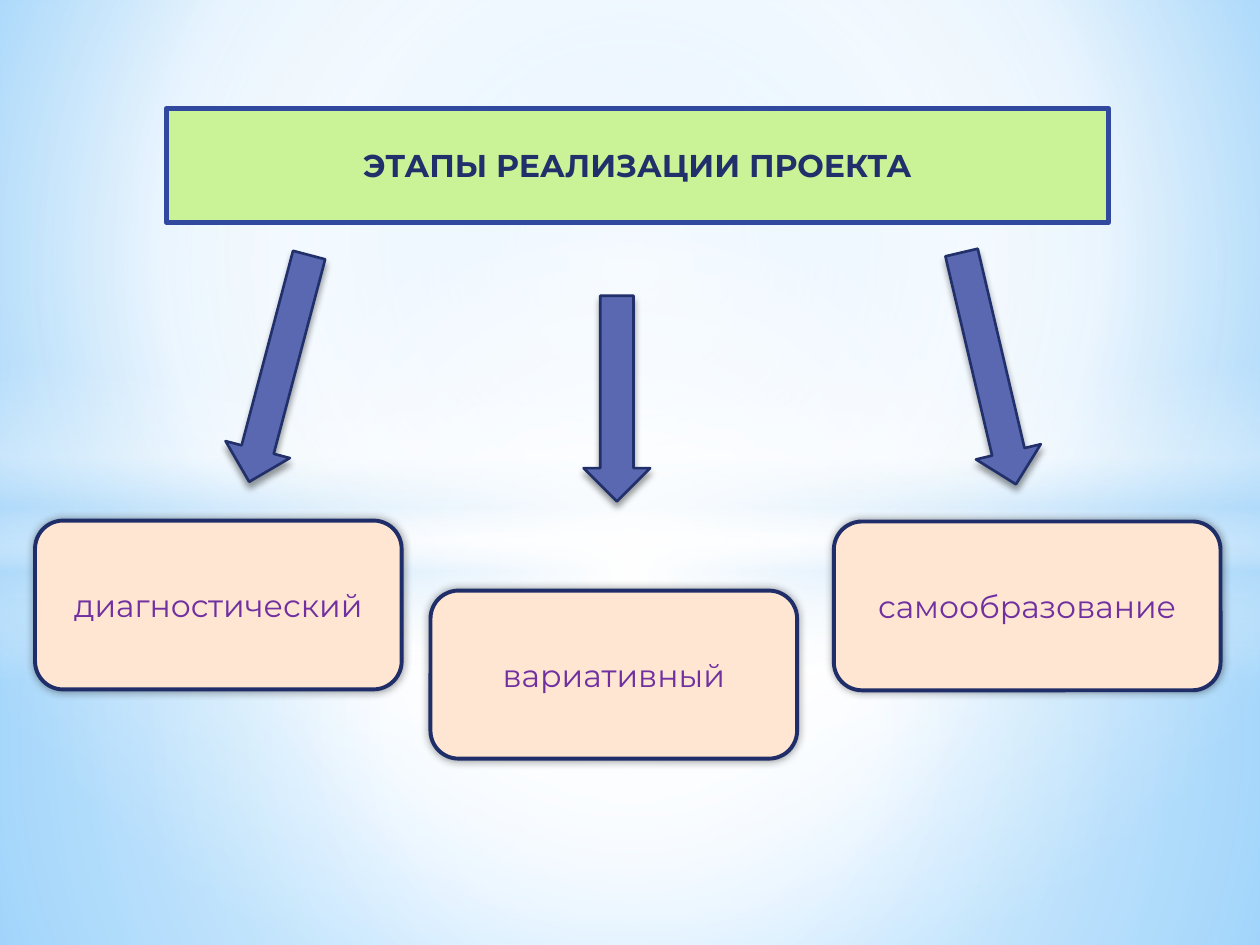
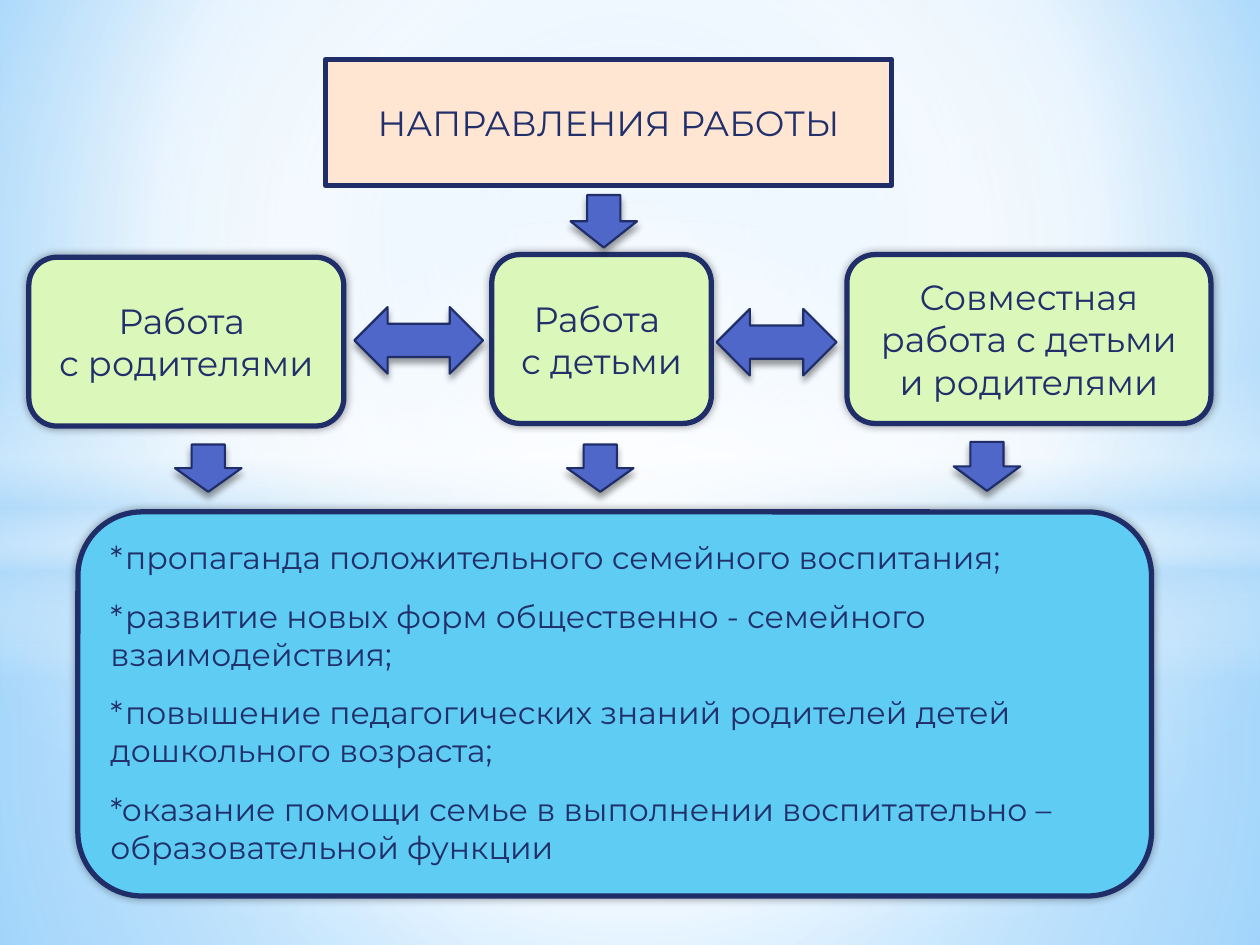
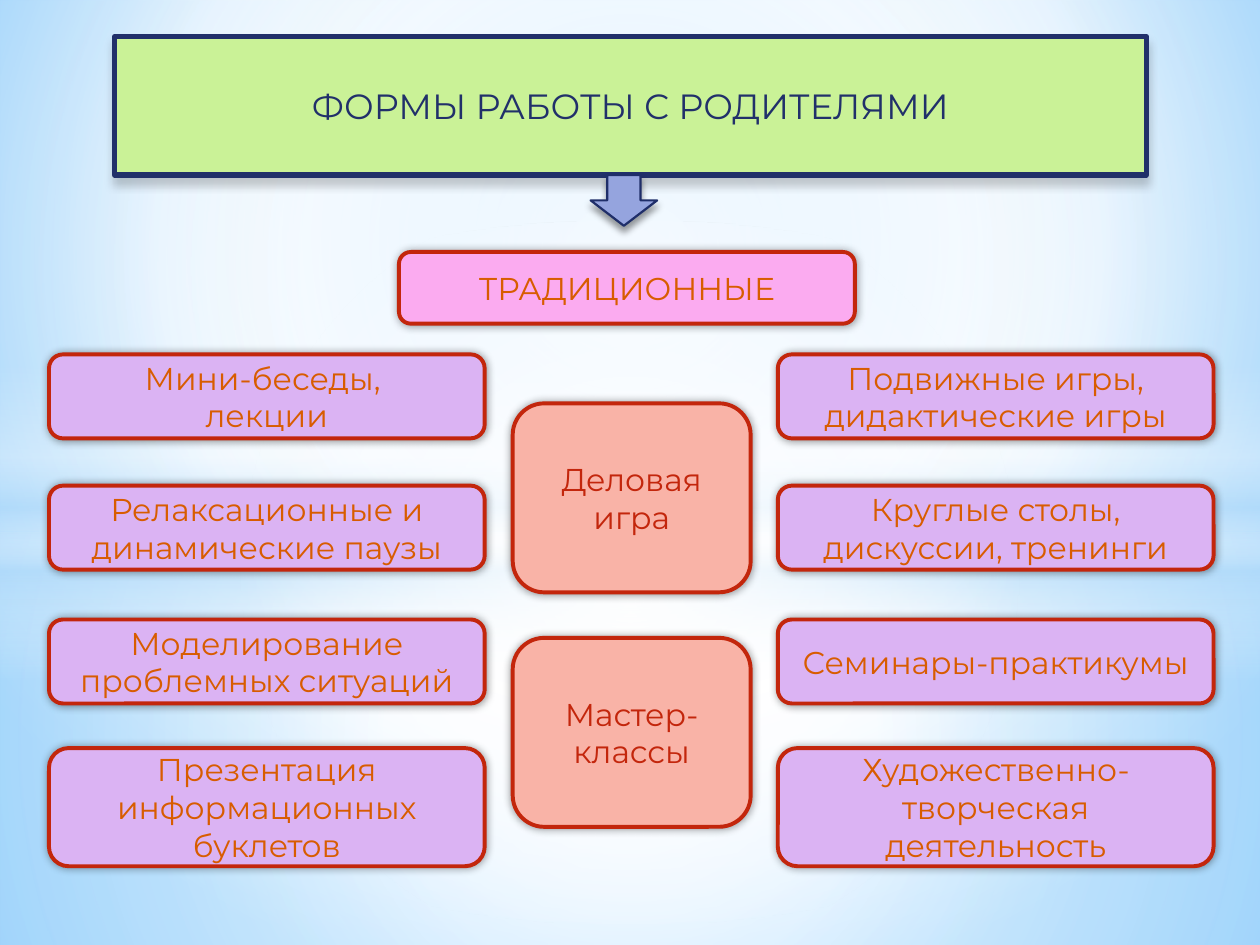
from lxml import etree
from pptx import Presentation
from pptx.dml.color import RGBColor
from pptx.enum.shapes import MSO_SHAPE
from pptx.enum.text import MSO_ANCHOR, MSO_AUTO_SIZE, PP_ALIGN
from pptx.oxml import parse_xml
from pptx.oxml.ns import nsdecls, qn
from pptx.util import Pt

RECTANGLE = MSO_SHAPE.RECTANGLE
ELLIPSE = MSO_SHAPE.OVAL
ROUNDED = MSO_SHAPE.ROUNDED_RECTANGLE
PLATE = MSO_SHAPE.FLOWCHART_ALTERNATE_PROCESS
DOWN_ARROW = MSO_SHAPE.DOWN_ARROW
DOUBLE_ARROW = MSO_SHAPE.LEFT_RIGHT_ARROW

FONT = "Montserrat"
WHITE = RGBColor(0xFF, 0xFF, 0xFF)
BLACK = RGBColor(0x00, 0x00, 0x00)
SKY = RGBColor(0x9E, 0xD5, 0xFF)
DEEP_SKY = RGBColor(0x5B, 0xB9, 0xFF)
HAZE = RGBColor(0xB4, 0xDC, 0xFA)
NAVY = RGBColor(0x1F, 0x2E, 0x69)
INK = RGBColor(0x21, 0x30, 0x6A)
ROYAL = RGBColor(0x31, 0x48, 0x9F)
INDIGO = RGBColor(0x59, 0x68, 0xB0)
BLUE = RGBColor(0x4E, 0x67, 0xC8)
PALE_BLUE = RGBColor(0x95, 0xA4, 0xDE)
CYAN = RGBColor(0x5E, 0xCC, 0xF3)
PEACH = RGBColor(0xFF, 0xE6, 0xD3)
LIME = RGBColor(0xCA, 0xF2, 0x97)
PALE_LIME = RGBColor(0xDC, 0xF7, 0xBA)
PURPLE = RGBColor(0x70, 0x30, 0xA0)
PINK = RGBColor(0xFB, 0xAB, 0xF0)
LILAC = RGBColor(0xDB, 0xB3, 0xF3)
SALMON = RGBColor(0xF9, 0xB3, 0xA7)
RED = RGBColor(0xC3, 0x26, 0x0C)
ORANGE = RGBColor(0xD8, 0x5C, 0x00)

# Shadows: opacity in percent, blur and distance in points, direction in degrees
GLOW = (40, 5, 0, 0)
DROP = (40, 4, 3, 90)
SOFT_DROP = (20, 5, 4, 90)

CENTRE = (50, 50, 50, 50)


def place(shape, box):
    shape.left, shape.top, shape.width, shape.height = map(Pt, box)


def apply_gradient(element, stops, focus=None):
    """Replace the first gradient in element; stops are (position, colour, opacity).

    With a focus (left, top, right, bottom) it is radial, otherwise it runs downwards.
    """
    gradient = element.find(".//" + qn("a:gradFill"))
    for child in list(gradient):
        gradient.remove(child)
    stop_list = etree.SubElement(gradient, qn("a:gsLst"))
    for position, colour, opacity in stops:
        stop = etree.SubElement(stop_list, qn("a:gs"), pos=str(position * 1000))
        tone = etree.SubElement(stop, qn("a:srgbClr"), val=str(colour))
        etree.SubElement(tone, qn("a:alpha"), val=str(opacity * 1000))
    if focus:
        radial = etree.SubElement(gradient, qn("a:path"), path="circle")
        sides = {side: str(value * 1000) for side, value in zip("ltrb", focus)}
        etree.SubElement(radial, qn("a:fillToRect"), **sides)
    else:
        etree.SubElement(gradient, qn("a:lin"), ang="5400000", scaled="0")


def add_shadow(shape, shadow):
    opacity, blur, distance, direction = shadow
    shape.element.spPr.find(qn("a:effectLst")).append(parse_xml(
        f'<a:outerShdw {nsdecls("a")} blurRad="{Pt(blur)}" dist="{Pt(distance)}" '
        f'dir="{direction * 60000}" algn="ctr" rotWithShape="0">'
        f'<a:srgbClr val="{BLACK}"><a:alpha val="{opacity * 1000}"/></a:srgbClr>'
        '</a:outerShdw>'))


def style_shape(shape, fill, line, width, shadow=None):
    shape.fill.solid()
    shape.fill.fore_color.rgb = fill
    shape.line.color.rgb = line
    shape.line.width = Pt(width)
    shape.shadow.inherit = False
    if shadow:
        add_shadow(shape, shadow)


def write(shape, text, colour, size=18, bold=False, align=PP_ALIGN.CENTER,
          anchor=MSO_ANCHOR.MIDDLE):
    frame = shape.text_frame
    frame.text = text
    frame.word_wrap = True
    frame.vertical_anchor = anchor
    for paragraph in frame.paragraphs:
        paragraph.alignment = align
        for run in paragraph.runs:
            run.font.name = FONT
            run.font.size = Pt(size)
            run.font.bold = bold
            run.font.color.rgb = colour


def add_box(slide, kind, box, fill, line, width, text="", colour=INK, size=18):
    shape = slide.shapes.add_shape(kind, *map(Pt, box))
    style_shape(shape, fill, line, width, GLOW)
    if text:
        write(shape, text, colour, size)
    return shape


def add_arrow(slide, kind, box, fill, line=NAVY, width=1.25, rotation=0):
    arrow = slide.shapes.add_shape(kind, *map(Pt, box))
    style_shape(arrow, fill, line, width, DROP)
    arrow.rotation = rotation


def set_title(slide, geometry, box, text, fill, line, size=20, bold=False,
              shadow=None, adjustments=()):
    """Give the title placeholder a preset outline and fill it in."""
    title = slide.shapes.title
    place(title, box)
    guides = "".join(f'<a:gd name="adj{number}" fmla="val {value}"/>'
                     for number, value in enumerate(adjustments, 1))
    title.element.spPr.find(qn("a:xfrm")).addnext(parse_xml(
        f'<a:prstGeom {nsdecls("a")} prst="{geometry}">'
        f'<a:avLst>{guides}</a:avLst></a:prstGeom>'))
    style_shape(title, fill, line, 3, shadow)
    write(title, text, INK, size, bold)
    title.text_frame.auto_size = MSO_AUTO_SIZE.NONE


def build_backdrop(master, slide):
    """Draw the sky layers on the slide and move them to the master."""
    master.background.fill.gradient()
    apply_gradient(master.element,
                   [(0, SKY, 100), (60, WHITE, 100), (100, DEEP_SKY, 100)],
                   (20, 10, 20, 60))
    layers = [
        (RECTANGLE, (0, 304.5, 720, 235.5),
         [(0, WHITE, 91), (37, WHITE, 76), (100, HAZE, 79)], CENTRE),
        (RECTANGLE, (0, 0, 720, 304.5),
         [(0, WHITE, 89), (48, WHITE, 62), (100, HAZE, 79)], CENTRE),
        (RECTANGLE, (0, 209, 720, 180),
         [(0, WHITE, 0), (29, WHITE, 30), (45, HAZE, 40), (55, WHITE, 26),
          (65, HAZE, 60), (100, WHITE, 0)], None),
        (ELLIPSE, (0, 126, 720, 402), [(0, WHITE, 100), (54, WHITE, 0)], CENTRE),
    ]
    for index, (kind, box, stops, focus) in enumerate(layers):
        layer = slide.shapes.add_shape(kind, *map(Pt, box))
        layer.fill.gradient()
        apply_gradient(layer.element, stops, focus)
        layer.line.fill.background()
        layer.shadow.inherit = False
        layer.element.nvSpPr.cNvPr.set("id", str(101 + index))
        master.shapes.element.insert(2 + index, layer.element)


def build_stages(slide):
    set_title(slide, "ellipse", (95, 62, 538.5, 65), "ЭТАПЫ РЕАЛИЗАЦИИ ПРОЕКТА",
              LIME, ROYAL, size=18, bold=True)
    stages = [
        ("диагностический", (20, 297.5, 209.5, 96.5), (140.5, 143.5, 38, 134), 14.8),
        ("вариативный", (246, 337.5, 209.5, 96), (333.5, 169, 38, 117.5), 0),
        ("самообразование", (476.5, 298, 221, 96.5), (546, 142.5, 38, 136), 346.8),
    ]
    for text, box, arrow_box, rotation in stages:
        add_box(slide, ROUNDED, box, PEACH, NAVY, 2.25, text, PURPLE)
        add_arrow(slide, DOWN_ARROW, arrow_box, INDIGO, INK, 1.5, rotation)


def build_directions(slide):
    set_title(slide, "roundRect", (186, 34, 323.5, 72), "НАПРАВЛЕНИЯ РАБОТЫ",
              PEACH, NAVY)
    directions = [
        ("Работа \nс родителями", (16.5, 147, 180, 96.5)),
        ("Работа \nс детьми", (281, 145.5, 125.5, 96.5)),
        ("Совместная работа с детьми и родителями", (484, 145.5, 208, 96.5)),
    ]
    for text, box in directions:
        add_box(slide, ROUNDED, box, PALE_LIME, NAVY, 3, text, size=20)
    add_box(slide, ROUNDED, (44.5, 292.5, 613.5, 219.5), CYAN, NAVY, 3)

    for box in [(326, 111.5, 38, 30), (100, 254, 38, 27), (324, 254, 38, 27),
                (545, 252.5, 38, 28)]:
        add_arrow(slide, DOWN_ARROW, box, BLUE)
    for box in [(202.5, 175.5, 73.5, 38), (409.5, 176.5, 68.5, 38)]:
        add_arrow(slide, DOUBLE_ARROW, box, BLUE)

    goals = [
        "*пропаганда положительного семейного воспитания;",
        "*развитие новых форм общественно - семейного взаимодействия;",
        "*повышение педагогических знаний родителей детей дошкольного возраста;",
        "*оказание помощи семье в выполнении воспитательно – образовательной функции",
    ]
    goal_box = slide.shapes.add_textbox(*map(Pt, (56, 304, 613.5, 196.5)))
    write(goal_box, "\n".join(goals), INK, align=PP_ALIGN.LEFT, anchor=MSO_ANCHOR.TOP)
    goal_box.text_frame.auto_size = MSO_AUTO_SIZE.SHAPE_TO_FIT_TEXT
    for paragraph in goal_box.text_frame.paragraphs:
        paragraph.space_after = Pt(12)


def build_forms(slide):
    set_title(slide, "leftRightArrow", (65.5, 21, 589.5, 79),
              "ФОРМЫ РАБОТЫ С РОДИТЕЛЯМИ", LIME, INK, shadow=SOFT_DROP,
              adjustments=(65800, 149800))
    slide.shapes.title.text_frame.word_wrap = False
    add_arrow(slide, DOWN_ARROW, (337.5, 100, 38, 29), PALE_BLUE)
    add_box(slide, PLATE, (228, 144, 260.5, 41), PINK, RED, 2.25,
            "ТРАДИЦИОННЫЕ", ORANGE)

    rows = [(202.5, 48), (277.5, 48), (354, 48), (427.5, 67.5)]
    columns = [
        (28, ["Мини-беседы, \nлекции",
              "Релаксационные и динамические паузы",
              "Моделирование проблемных ситуаций",
              "Презентация информационных буклетов"]),
        (444.5, ["Подвижные игры, дидактические игры",
                 "Круглые столы, дискуссии, тренинги",
                 "Семинары-практикумы",
                 "Художественно-творческая деятельность"]),
    ]
    for left, texts in columns:
        for (top, height), text in zip(rows, texts):
            add_box(slide, PLATE, (left, top, 249, height), LILAC, RED, 2.25,
                    text, ORANGE)

    for top, text in [(230.5, "Деловая игра"), (364.5, "Мастер-классы")]:
        add_box(slide, ROUNDED, (293, top, 136, 108), SALMON, RED, 2.25, text, RED)


def main():
    presentation = Presentation()
    presentation.slide_width, presentation.slide_height = Pt(720), Pt(540)
    title_only = presentation.slide_layouts[5]
    builders = [build_stages, build_directions, build_forms]
    slides = [presentation.slides.add_slide(title_only) for _ in builders]
    build_backdrop(presentation.slide_master, slides[0])
    for build, slide in zip(builders, slides):
        build(slide)
    presentation.save("out.pptx")


if __name__ == "__main__":
    main()
